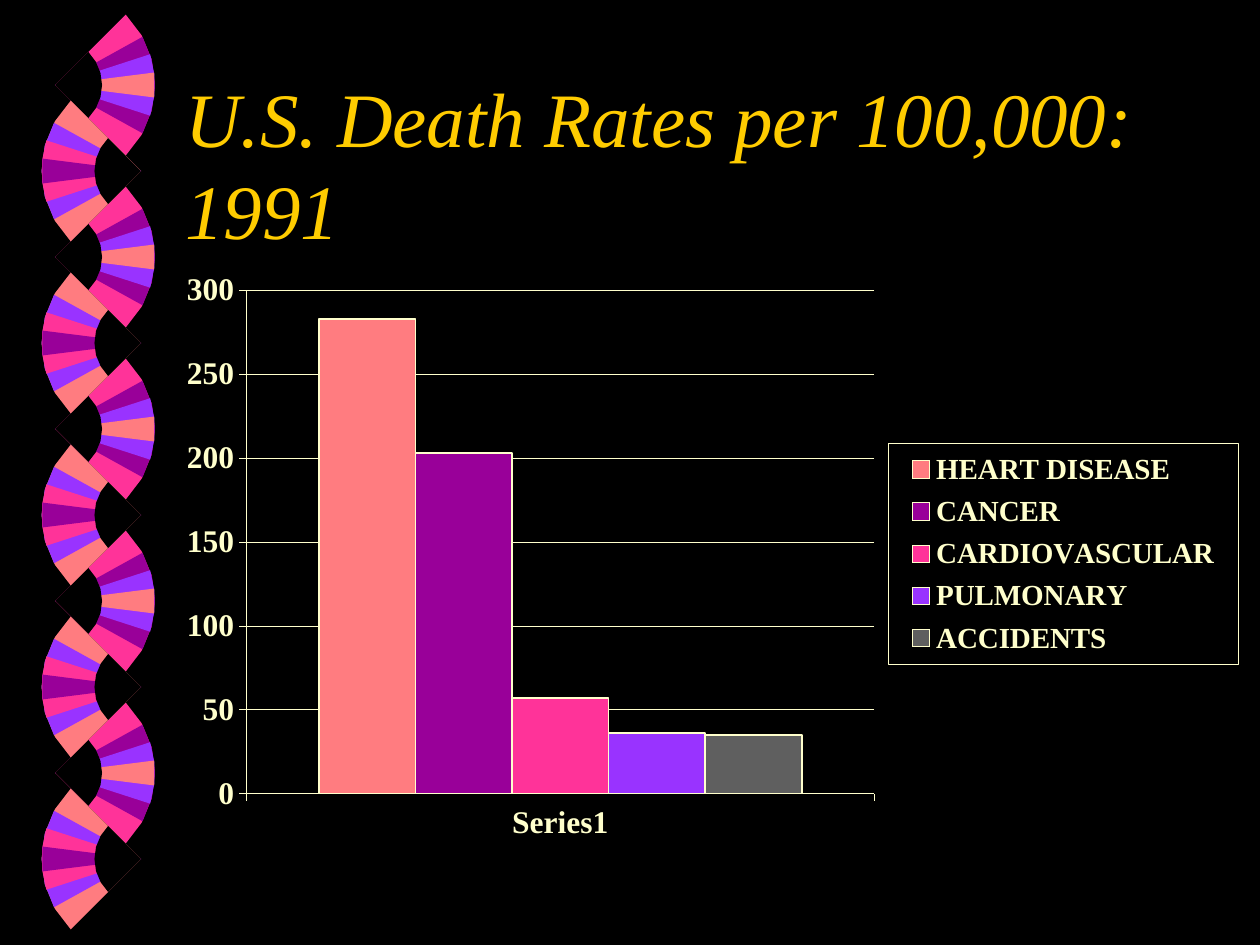
import math

from lxml import etree
from pptx import Presentation
from pptx import util as u
from pptx.chart import data as chart_data
from pptx.dml.color import RGBColor
from pptx.enum import chart as ch, text
from pptx.oxml import parse_xml
from pptx.oxml.ns import qn

BLACK = RGBColor(0x00, 0x00, 0x00)
GOLD = RGBColor(0xFF, 0xCC, 0x00)
CREAM = RGBColor(0xFF, 0xFF, 0xCC)
PINK = RGBColor(0xFF, 0x33, 0x99)
PURPLE = RGBColor(0x99, 0x00, 0x99)
VIOLET = RGBColor(0x99, 0x33, 0xFF)
CORAL = RGBColor(0xFF, 0x7C, 0x80)
GRAY = RGBColor(0x5F, 0x5F, 0x5F)

FONT = "Times New Roman"
SLIDE_W, SLIDE_H = u.Inches(10), u.Inches(7.5)
CONTENT_LEFT, CONTENT_W = 13.7, 85

HALF_ANGLES = (45, 29, 18, 7.2)
RIGHT_COLORS = (PINK, PURPLE, VIOLET, CORAL)
LEFT_COLORS = (CORAL, VIOLET, PINK, PURPLE)
FAN_RADIUS, HOLE_RADIUS = u.Inches(0.79), u.Inches(0.37)
FAN_ROWS, ROW_PITCH = 5, SLIDE_H * 0.182
LEFT_SHIFT = SLIDE_W * 0.068
DEGREES_PER_STEP = 15

DEATH_RATES = (
    ("HEART DISEASE", 283, CORAL),
    ("CANCER", 203, PURPLE),
    ("CARDIOVASCULAR", 57, PINK),
    ("PULMONARY", 36, VIOLET),
    ("ACCIDENTS", 35, GRAY),
)


def percent_box(left, top, width, height):
    return (int(SLIDE_W * left / 100), int(SLIDE_H * top / 100),
            int(SLIDE_W * width / 100), int(SLIDE_H * height / 100))


def style_font(font, size, color, bold=False, italic=False):
    font.name, font.size = FONT, u.Pt(size)
    font.bold, font.italic = bold, italic
    font.color.rgb = color


def write(frame, words, align=text.PP_ALIGN.LEFT, **style):
    paragraph = frame.paragraphs[0]
    paragraph.alignment = align
    run = paragraph.add_run()
    run.text = words
    style_font(run.font, **style)


def style_line(line, color, width):
    line.color.rgb = color
    line.width = u.Pt(width)


def add_wedge(fan, apex, side, radius, half_angle, color):
    span = radius * math.cos(math.radians(45 - half_angle))
    corner_x = apex[0] + side * span * (math.sqrt(0.5) - 0.5)
    corner_y = apex[1] + span / 2
    steps = math.ceil(2 * half_angle / DEGREES_PER_STEP)
    angles = [math.radians(45 - half_angle + 2 * half_angle * step / steps)
              for step in range(steps + 1)]
    arc = [(corner_x + side * radius * math.cos(angle),
            corner_y - radius * math.sin(angle)) for angle in angles]
    outline = fan.shapes.build_freeform(int(corner_x), int(corner_y))
    outline.add_line_segments(arc, close=True)
    wedge = outline.convert_to_shape()
    wedge.rotation = 45 if side > 0 else 315
    wedge.shadow.inherit = False
    wedge.fill.solid()
    wedge.fill.fore_color.rgb = color
    wedge.line.fill.background()


def add_fan(slide, apex, side, colors):
    fan = slide.shapes.add_group_shape()
    for half_angle, color in zip(HALF_ANGLES, colors):
        add_wedge(fan, apex, side, FAN_RADIUS, half_angle, color)
    add_wedge(fan, apex, side, HOLE_RADIUS, 45, BLACK)


def add_helix(slide, left, top):
    for side, dx, dy, colors in ((1, 0, 0, RIGHT_COLORS),
                                 (-1, LEFT_SHIFT, ROW_PITCH / 2, LEFT_COLORS)):
        for row in range(FAN_ROWS):
            add_fan(slide, (left + dx, top + dy + row * ROW_PITCH), side, colors)


def add_title(slide, box):
    title = slide.shapes.title
    title.left, title.top, title.width, title.height = box
    frame = title.text_frame
    frame.word_wrap = True
    frame.auto_size = text.MSO_AUTO_SIZE.NONE
    frame.vertical_anchor = text.MSO_ANCHOR.MIDDLE
    write(frame, "U.S. Death Rates per 100,000: 1991",
          size=44, color=GOLD, italic=True)


def set_layout(element, position, percents, inner=False):
    for old in element.findall(qn("c:layout")):
        element.remove(old)
    layout = etree.Element(qn("c:layout"))
    manual = etree.SubElement(layout, qn("c:manualLayout"))
    settings = [("layoutTarget", "inner")] if inner else []
    settings += [("xMode", "edge"), ("yMode", "edge")]
    settings += [(tag, percent / 100) for tag, percent in zip("xywh", percents)]
    for tag, value in settings:
        etree.SubElement(manual, qn("c:" + tag)).set("val", str(value))
    element.insert(position, layout)


def outline_legend(legend_element):
    legend_element.find(qn("c:overlay")).addnext(parse_xml(
        '<c:spPr xmlns:c="http://schemas.openxmlformats.org/drawingml/2006/chart" '
        'xmlns:a="http://schemas.openxmlformats.org/drawingml/2006/main">'
        f'<a:noFill/><a:ln w="3175"><a:solidFill><a:srgbClr val="{CREAM}"/>'
        '</a:solidFill></a:ln></c:spPr>'))


def add_rates_chart(slide, box):
    rates = chart_data.CategoryChartData()
    rates.categories = ["Series1"]
    for cause, rate, _ in DEATH_RATES:
        rates.add_series(cause, [rate])
    chart = slide.shapes.add_chart(
        ch.XL_CHART_TYPE.COLUMN_CLUSTERED, *box, rates).chart
    chart.has_title = False
    style_font(chart.font, 18, CREAM, bold=True)

    columns = chart.plots[0]
    columns.gap_width, columns.overlap = 150, 0
    columns.vary_by_categories = False
    for column, (_, _, color) in zip(columns.series, DEATH_RATES):
        column.format.fill.solid()
        column.format.fill.fore_color.rgb = color
        style_line(column.format.line, CREAM, 1)

    for axis in (chart.category_axis, chart.value_axis):
        axis.major_tick_mark = ch.XL_TICK_MARK.OUTSIDE
        axis.minor_tick_mark = ch.XL_TICK_MARK.NONE
        style_font(axis.tick_labels.font, 18, CREAM, bold=True)
        style_line(axis.format.line, CREAM, 0.25)
    chart.category_axis.tick_label_position = ch.XL_TICK_LABEL_POSITION.LOW
    rate_axis = chart.value_axis
    rate_axis.minimum_scale, rate_axis.maximum_scale = 0, 300
    rate_axis.major_unit = 50
    rate_axis.has_major_gridlines = True
    style_line(rate_axis.major_gridlines.format.line, CREAM, 0.25)

    chart.has_legend = True
    legend = chart.legend
    legend.position = ch.XL_LEGEND_POSITION.RIGHT
    legend.include_in_layout = False
    style_font(legend.font, 16.6, CREAM, bold=True)
    plot_area = chart.element.find(".//" + qn("c:plotArea"))
    legend_element = chart.element.find(".//" + qn("c:legend"))
    set_layout(plot_area, 0, (6.9, 2.9, 58.6, 89), inner=True)
    set_layout(legend_element, 1, (66.8, 30, 32.7, 39))
    outline_legend(legend_element)


def main():
    deck = Presentation()
    deck.slide_width, deck.slide_height = SLIDE_W, SLIDE_H
    slide = deck.slides.add_slide(deck.slide_layouts[5])
    slide.background.fill.solid()
    slide.background.fill.fore_color.rgb = BLACK
    add_helix(slide, SLIDE_W * 0.044, SLIDE_H * 0.09)
    add_title(slide, percent_box(CONTENT_LEFT, 8.9, CONTENT_W, 16.7))
    add_rates_chart(slide, percent_box(CONTENT_LEFT, 28.9, CONTENT_W, 60))
    deck.save("out.pptx")


if __name__ == "__main__":
    main()
